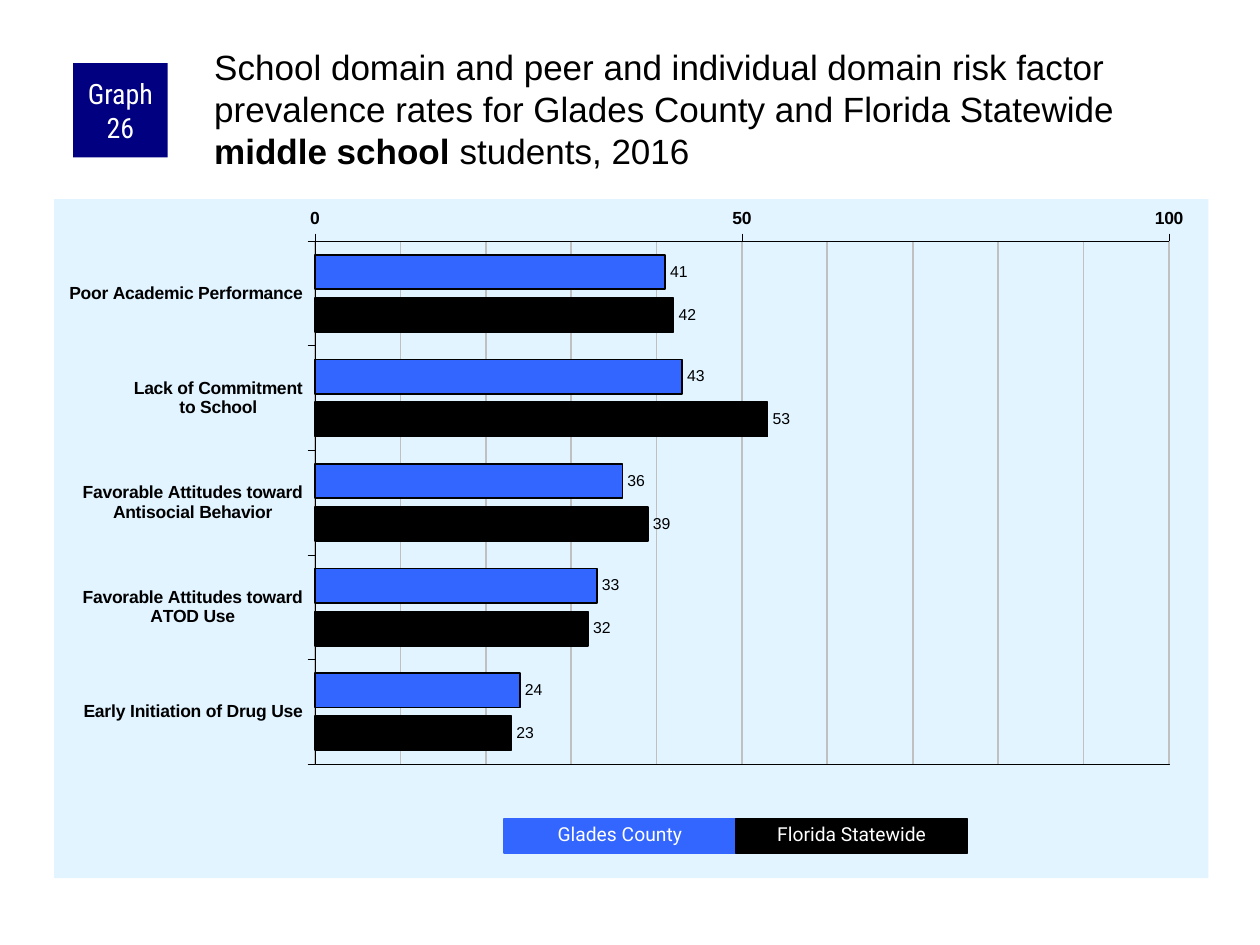
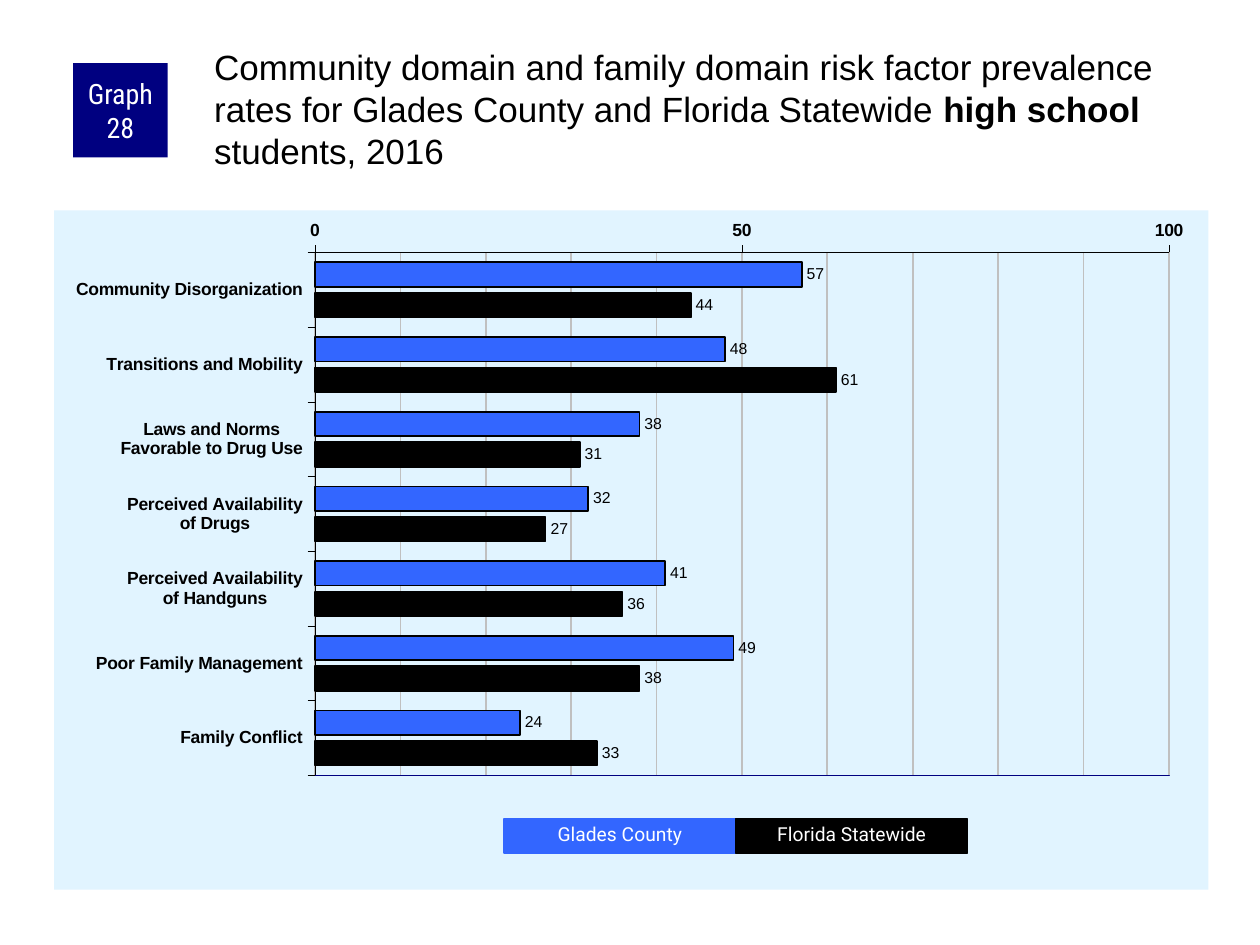
import pptx
import pptx.chart.data
import pptx.dml.color
import pptx.enum.chart
import pptx.enum.shapes
import pptx.enum.text
import pptx.oxml
import pptx.oxml.ns
import pptx.util
from pptx.util import Inches

COLORS = {
    "black": "000000",
    "white": "FFFFFF",
    "navy": "000080",
    "county": "3366FF",
    "state": "000000",
    "panel": "E1F4FF",
    "grid": "C0C0C0",
}
REGIONS = [("Glades County", "county"), ("Florida Statewide", "state")]

# Boxes are left, top, width, height in inches
BADGE_BOX = (0.58, 0.5, 0.75, 0.75)
TITLE_BOX = (1.67, 0.33, 7.92, 0.83)
LEGEND_BOX = (4, 6.5, 3.68, 0.27)
CHART_LEFT, CHART_WIDTH, CHART_HEIGHT = 0.43, 9.16, 5.39

GRAPHS = [
    {
        "number": 26,
        "domains": "School domain and peer and individual domain",
        "level": "middle school",
        "chart_top": 1.58,
        "frame": ("black", 0.25),
        "rates": [
            ("Poor Academic Performance", 41, 42),
            ("Lack of Commitment\nto School", 43, 53),
            ("Favorable Attitudes toward\nAntisocial Behavior", 36, 39),
            ("Favorable Attitudes toward\nATOD Use", 33, 32),
            ("Early Initiation of Drug Use", 24, 23),
        ],
    },
    {
        "number": 28,
        "domains": "Community domain and family domain",
        "level": "high school",
        "chart_top": 1.67,
        "frame": ("navy", 1),
        "rates": [
            ("Community Disorganization", 57, 44),
            ("Transitions and Mobility", 48, 61),
            ("Laws and Norms\nFavorable to Drug Use", 38, 31),
            ("Perceived Availability\nof Drugs", 32, 27),
            ("Perceived Availability\nof Handguns", 41, 36),
            ("Poor Family Management", 49, 38),
            ("Family Conflict", 24, 33),
        ],
    },
]


def rgb(color):
    return pptx.dml.color.RGBColor.from_string(COLORS[color])


def set_font(font, size, color="black", name="Arial", bold=False):
    font.size = pptx.util.Pt(size)
    font.name = name
    font.bold = bold
    font.color.rgb = rgb(color)


def set_line(line, color, width):
    line.color.rgb = rgb(color)
    line.width = pptx.util.Pt(width)


def set_margins(frame, left, top, right, bottom):
    frame.margin_left, frame.margin_top = Inches(left), Inches(top)
    frame.margin_right, frame.margin_bottom = Inches(right), Inches(bottom)


def add_span(para, text, size, color="black", name="Arial", bold=False):
    span = para.add_run()
    span.text = text
    set_font(span.font, size, color, name, bold)


def add_label_block(page, box, text, fill, size, font):
    """Add a filled rectangle with centred white text."""
    block = page.shapes.add_shape(
        pptx.enum.shapes.MSO_SHAPE.RECTANGLE, *map(Inches, box))
    block.shadow.inherit = False
    block.fill.solid()
    block.fill.fore_color.rgb = rgb(fill)
    block.line.fill.background()
    block.text_frame.word_wrap = True
    para = block.text_frame.paragraphs[0]
    para.alignment = pptx.enum.text.PP_ALIGN.CENTER
    add_span(para, text, size, "white", font)
    return block


def add_badge(page, box, number):
    badge = add_label_block(page, box, f"Graph {number}", "navy", 16, "Roboto Condensed")
    badge.text_frame.vertical_anchor = pptx.enum.text.MSO_ANCHOR.MIDDLE
    set_margins(badge.text_frame, 0.05, 0, 0.05, 0)


def add_title(page, box, domains, level):
    frame = page.shapes.add_textbox(*map(Inches, box)).text_frame
    frame.word_wrap = True
    set_margins(frame, 0.03, 0.03, 0, 0)
    para = frame.paragraphs[0]
    add_span(para, f"{domains} risk factor prevalence rates for "
                   "Glades County and Florida Statewide ", 20)
    add_span(para, level, 20, bold=True)
    add_span(para, " students, 2016", 20)


def add_legend(page, box):
    left, top, width, height = box
    step = width / len(REGIONS)
    for index, (region, color) in enumerate(REGIONS):
        key = add_label_block(page, (left + index * step, top, step, height),
                              region, color, 11, "Roboto")
        set_line(key.line, color, 0.75)
        key.text_frame.auto_size = pptx.enum.text.MSO_AUTO_SIZE.SHAPE_TO_FIT_TEXT
        key.text_frame.vertical_anchor = pptx.enum.text.MSO_ANCHOR.TOP
        key.text_frame.paragraphs[0].line_spacing = 0.9


def chart_xml(tag, content):
    namespaces = pptx.oxml.ns.nsdecls("c", "a")
    return pptx.oxml.parse_xml(f"<c:{tag} {namespaces}>{content}</c:{tag}>")


def solid_xml(color):
    return f'<a:solidFill><a:srgbClr val="{COLORS[color]}"/></a:solidFill>'


def line_xml(color, width):
    return f'<a:ln w="{int(pptx.util.Pt(width))}">{solid_xml(color)}</a:ln>'


def style_axes(chart):
    ticks = pptx.enum.chart.XL_TICK_MARK
    rates, factors = chart.value_axis, chart.category_axis
    for axis in (rates, factors):
        axis.major_tick_mark, axis.minor_tick_mark = ticks.OUTSIDE, ticks.NONE
        set_font(axis.tick_labels.font, 10, bold=True)
        set_line(axis.format.line, "black", 0.25)
    factors.reverse_order = True
    factors.crosses = pptx.enum.chart.XL_AXIS_CROSSES.MAXIMUM
    rates.minimum_scale, rates.maximum_scale = 0, 100
    rates.major_unit, rates.minor_unit = 50, 10
    rates.has_major_gridlines = rates.has_minor_gridlines = True
    set_line(rates.major_gridlines.format.line, "grid", 1)
    for gridlines in chart.element.iter(pptx.oxml.ns.qn("c:minorGridlines")):
        gridlines.append(chart_xml("spPr", line_xml("grid", 1)))


def style_bars(chart):
    plot = chart.plots[0]
    plot.gap_width, plot.overlap = 80, -25
    plot.vary_by_categories = False
    for series, (_, color) in zip(plot.series, REGIONS):
        series.invert_if_negative = False
        series.format.fill.solid()
        series.format.fill.fore_color.rgb = rgb(color)
        set_line(series.format.line, "black", 1)
        labels = series.data_labels
        labels.show_value = True
        labels.position = pptx.enum.chart.XL_LABEL_POSITION.OUTSIDE_END
        set_font(labels.font, 9)


def style_areas(chart, frame):
    """Fill the panel, then place and frame the plot inside it."""
    root = chart.element.find(pptx.oxml.ns.qn("c:chart"))
    root.addnext(chart_xml("spPr", solid_xml("panel") + "<a:ln><a:noFill/></a:ln>"))
    plot_area = root.find(pptx.oxml.ns.qn("c:plotArea"))
    for layout in plot_area.findall(pptx.oxml.ns.qn("c:layout")):
        plot_area.remove(layout)
    place = {"x": 0.226, "y": 0.062, "w": 0.74, "h": 0.77}
    modes = '<c:layoutTarget val="inner"/><c:xMode val="edge"/><c:yMode val="edge"/>'
    sizes = "".join(f'<c:{key} val="{value}"/>' for key, value in place.items())
    plot_area.insert(0, chart_xml(
        "layout", f"<c:manualLayout>{modes}{sizes}</c:manualLayout>"))
    plot_area.append(chart_xml("spPr", "<a:noFill/>" + line_xml(*frame)))


def add_rate_chart(page, box, rates, frame):
    factors, *columns = zip(*rates)
    data = pptx.chart.data.CategoryChartData()
    data.categories = factors
    for (region, _), values in zip(REGIONS, columns):
        data.add_series(region, values)
    chart = page.shapes.add_chart(
        pptx.enum.chart.XL_CHART_TYPE.BAR_CLUSTERED, *map(Inches, box), data).chart
    chart.has_legend = chart.has_title = False
    set_font(chart.font, 11.8)
    style_axes(chart)
    style_bars(chart)
    style_areas(chart, frame)


def add_graph_page(deck, graph):
    page = deck.slides.add_slide(deck.slide_layouts[6])
    chart_box = (CHART_LEFT, graph["chart_top"], CHART_WIDTH, CHART_HEIGHT)
    add_rate_chart(page, chart_box, graph["rates"], graph["frame"])
    add_badge(page, BADGE_BOX, graph["number"])
    add_title(page, TITLE_BOX, graph["domains"], graph["level"])
    add_legend(page, LEGEND_BOX)


def main():
    deck = pptx.Presentation()
    deck.slide_width, deck.slide_height = Inches(10), Inches(7.5)
    for graph in GRAPHS:
        add_graph_page(deck, graph)
    deck.save("out.pptx")


if __name__ == "__main__":
    main()
